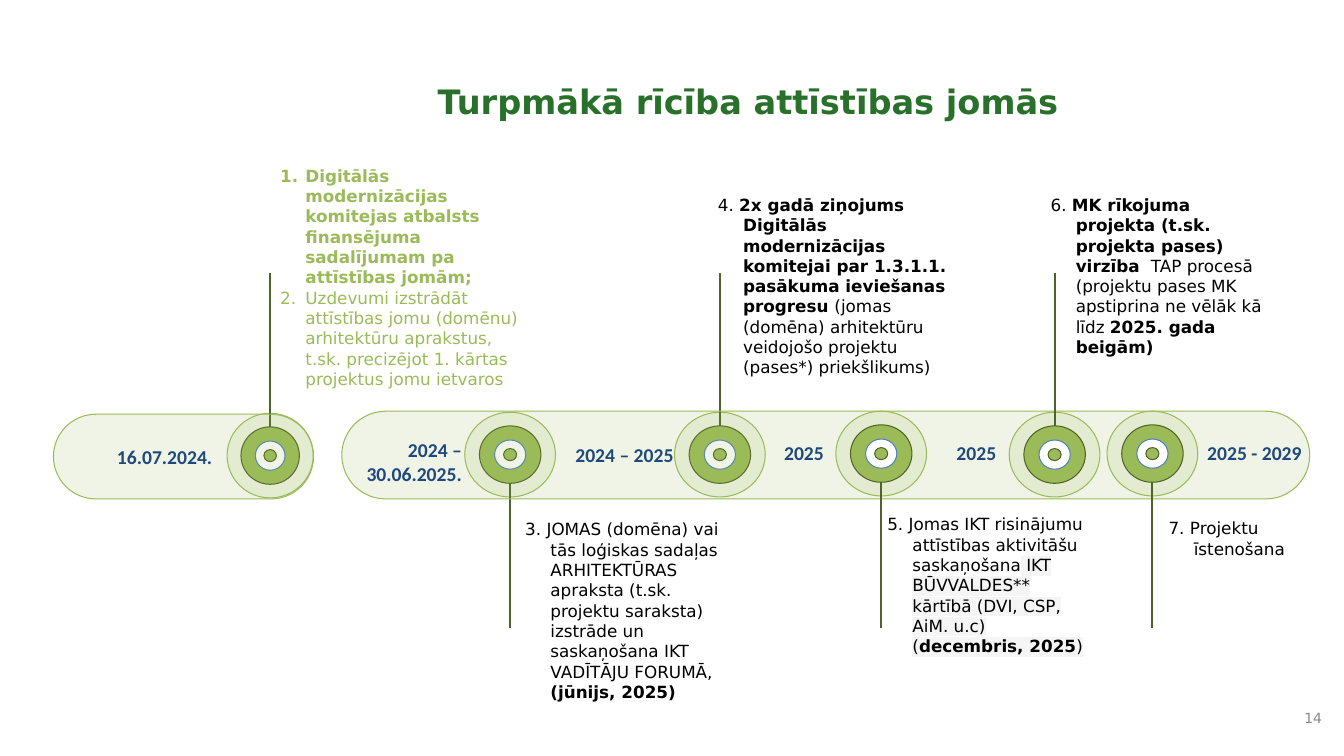
from lxml import etree
from pptx import Presentation
from pptx.dml.color import RGBColor
from pptx.enum.shapes import MSO_CONNECTOR as CONN, MSO_SHAPE as SHAPE
from pptx.enum.text import MSO_ANCHOR as ANCHOR, PP_ALIGN as ALIGN
from pptx.oxml.ns import qn
from pptx.util import Pt

PX = 9144  # 100 px to the inch
GREEN = RGBColor(0x9B, 0xBB, 0x59)
DARK_GREEN = RGBColor(0x4F, 0x62, 0x28)
TITLE_GREEN = RGBColor(0x29, 0x70, 0x2A)
NAVY = RGBColor(0x1F, 0x49, 0x7D)
BLUE = RGBColor(0x4F, 0x81, 0xBD)
GREY = RGBColor(0x89, 0x89, 0x89)
MARKER = RGBColor(0xF5, 0xF5, 0xF5)
WHITE = RGBColor(0xFF, 0xFF, 0xFF)
BLACK = RGBColor(0, 0, 0)
BODY_FONT, DATE_FONT = "DejaVu Sans", "Calibri"

# width, height, fill, line, opacity in percent
RINGS = [(90, 84, GREEN, GREEN, 15), (61, 57, GREEN, DARK_GREEN, 100),
         (31, 29, WHITE, BLUE, 100), (13, 12, GREEN, DARK_GREEN, 100)]
STEM_TOP, STEM_BOTTOM = 271, 623

# centre x, centre y, stem end, change of ring width in percent
NODES_BEHIND = [(268, 452, STEM_TOP, 95), (506, 451, STEM_BOTTOM, 100),
                (714, 451, STEM_TOP, 100)]
NODES_FRONT = [(874, 450, STEM_BOTTOM, 100), (1046, 451, STEM_TOP, 100),
               (1143, 450, STEM_BOTTOM, 100)]

DATES = [("2024 – 30.06.2025.", 339, 430, 129, 57), ("2024 – 2025", 549, 434, 129, 34),
         ("2025", 752, 433, 75, 34), ("2025", 923, 433, 75, 34),
         ("2025 - 2029", 1183, 433, 118, 34)]

# box, then runs as (text, bold, highlighted)
STEPS = [
    ((521, 510, 216, 252), [
        ("3. JOMAS (domēna) vai tās loģiskas sadaļas ARHITEKTŪRAS apraksta (t.sk. projektu "
         "saraksta) izstrāde un saskaņošana IKT VADĪTĀJU FORUMĀ, ", False, False),
        ("(jūnijs, 2025)", True, False)]),
    ((712, 188, 228, 246), [
        ("4. ", False, False),
        ("2x gadā ziņojums Digitālās modernizācijas komitejai par 1.3.1.1. pasākuma "
         "ieviešanas progresu ", True, False),
        ("(jomas (domēna) arhitektūru veidojošo projektu (pases*) priekšlikums)",
         False, False)]),
    ((880, 505, 198, 192), [
        ("5. Jomas IKT risinājumu attīstības aktivitāšu saskaņošana", False, False),
        (" IKT BŪVVALDES** kārtībā (DVI, CSP, AiM. u.c) (", False, True),
        ("decembris, 2025", True, True),
        (")", False, True)]),
    ((1042, 188, 215, 192), [
        ("6. ", False, False),
        ("MK rīkojuma projekta (t.sk. projekta pases) virzība ", True, False),
        (" TAP procesā (projektu pases MK apstiprina ne vēlāk kā līdz ", False, False),
        ("2025. gada beigām)", True, False)]),
    ((1159, 509, 151, 71), [("7. Projektu īstenošana", False, False)]),
]
DONE_STEPS = [
    ("Digitālās modernizācijas komitejas atbalsts finansējuma sadalījumam pa "
     "attīstības jomām;", True),
    ("Uzdevumi izstrādāt attīstības jomu (domēnu) arhitektūru aprakstus, t.sk. "
     "precizējot 1. kārtas projektus jomu ietvaros", False),
]


class Timeline:
    def __init__(self, prs):
        self.s = prs.slides.add_slide(prs.slide_layouts[5])

    def run(self, p, text, size, color, bold=False, font=BODY_FONT, marked=False):
        r = p.add_run()
        r.text = text
        r.font.size, r.font.bold = Pt(size), bold
        r.font.color.rgb = color
        if marked:
            mark = etree.SubElement(r.font._element, qn("a:highlight"))
            etree.SubElement(mark, qn("a:srgbClr"), val=str(MARKER))
        r.font.name = font

    def title(self, text, x, y, w, h):
        sp = self.s.shapes.title
        sp.left, sp.top, sp.width, sp.height = (v * PX for v in (x, y, w, h))
        sp.text_frame.vertical_anchor = ANCHOR.MIDDLE
        p = sp.text_frame.paragraphs[0]
        p.alignment = ALIGN.LEFT
        self.run(p, text, 24, TITLE_GREEN, True)

    def box(self, x, y, w, h, side_inset=10):
        sp = self.s.shapes.add_textbox(x * PX, y * PX, w * PX, h * PX)
        tf = sp.text_frame
        tf.word_wrap = True
        tf.margin_left = tf.margin_right = side_inset * PX
        tf.margin_top = tf.margin_bottom = 5 * PX
        return tf

    def hang(self, p, numbered=False):
        """Give a paragraph a hanging indent and, if asked, a number."""
        pPr = p._p.get_or_add_pPr()
        pPr.set("marL", str(25 * PX))
        pPr.set("indent", str(-25 * PX))
        if numbered:
            etree.SubElement(pPr, qn("a:buFont"), typeface=BODY_FONT)
            etree.SubElement(pPr, qn("a:buAutoNum"), type="arabicPeriod")
        p.line_spacing = Pt(14.5)

    def step(self, box, runs):
        p = self.box(*box, side_inset=0).paragraphs[0]
        self.hang(p)
        for text, bold, marked in runs:
            self.run(p, text, 12, BLACK, bold, marked=marked)

    def numbered_list(self, box, items):
        tf = self.box(*box, side_inset=0)
        for i, (text, bold) in enumerate(items):
            p = tf.add_paragraph() if i else tf.paragraphs[0]
            self.hang(p, numbered=True)
            self.run(p, text, 12, GREEN, bold)

    def date(self, text, x, y, w, h):
        p = self.box(x, y, w, h).paragraphs[0]
        p.alignment = ALIGN.RIGHT
        self.run(p, text, 14, NAVY, True, DATE_FONT)

    def number(self, text, x, y, w, h):
        tf = self.box(x, y, w, h)
        tf.vertical_anchor = ANCHOR.MIDDLE
        p = tf.paragraphs[0]
        p.alignment = ALIGN.RIGHT
        self.run(p, text, 10, GREY)

    def shape(self, kind, x, y, w, h, fill, line, opacity=100):
        sp = self.s.shapes.add_shape(kind, *(round(v * PX) for v in (x, y, w, h)))
        sp.shadow.inherit = False
        sp.fill.solid()
        sp.fill.fore_color.rgb = fill
        if opacity < 100:
            clr = sp._element.spPr.find(qn("a:solidFill")).find(qn("a:srgbClr"))
            etree.SubElement(clr, qn("a:alpha"), val=str(opacity * 1000))
        sp.line.color.rgb = line
        sp.line.width = Pt(0.75)
        return sp

    def bar(self, x, y, w, h):
        sp = self.shape(SHAPE.ROUNDED_RECTANGLE, x, y, w, h, GREEN, GREEN, 15)
        sp.adjustments[0] = 0.5
        return sp

    def dated_bar(self, text, x, y, w, h, right_inset):
        tf = self.bar(x, y, w, h).text_frame
        tf.margin_right = right_inset * PX
        tf.vertical_anchor = ANCHOR.MIDDLE
        p = tf.paragraphs[0]
        p.alignment = ALIGN.RIGHT
        self.run(p, text, 14, NAVY, True, DATE_FONT)

    def node(self, cx, cy, stem_end, percent):
        """Draw a target of rings with a stem up or down to its text."""
        for w, h, fill, line, opacity in RINGS:
            w = w * percent / 100
            self.shape(SHAPE.OVAL, cx - w / 2, cy - h / 2, w, h, fill, line, opacity)
        start = cy + (28 if stem_end > cy else -28)
        stem = self.s.shapes.add_connector(
            CONN.STRAIGHT, cx * PX, start * PX, cx * PX, stem_end * PX)
        stem.line.color.rgb = DARK_GREEN
        stem.line.width = Pt(1.5)
        etree.SubElement(stem._element.spPr, qn("a:effectLst"))


def main():
    prs = Presentation()
    prs.slide_width, prs.slide_height = 1333 * PX, 750 * PX
    t = Timeline(prs)
    t.number("14", 1277, 696, 44, 33)
    t.title("Turpmākā rīcība attīstības jomās", 424, 44, 889, 113)
    for node in NODES_BEHIND:
        t.node(*node)
    t.bar(339, 408, 960, 87)
    t.dated_bar("16.07.2024.", 53, 411, 258, 84, right_inset=88)
    for node in NODES_FRONT:
        t.node(*node)
    t.numbered_list((278, 159, 243, 232), DONE_STEPS)
    for box, runs in STEPS:
        t.step(box, runs)
    for date in DATES:
        t.date(*date)
    prs.save("out.pptx")


if __name__ == "__main__":
    main()
